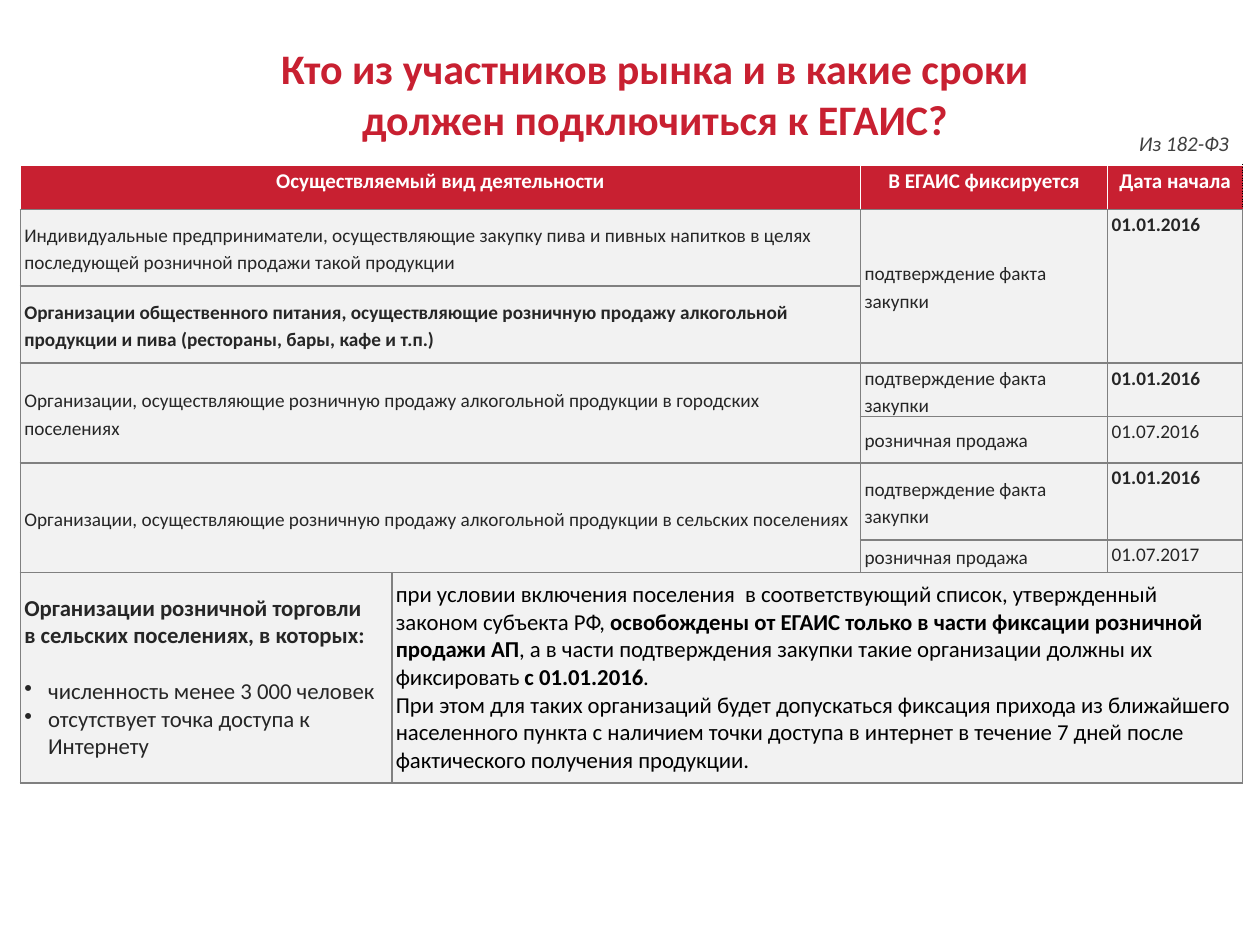
from lxml import etree
from pptx import Presentation
from pptx.dml.color import RGBColor
from pptx.enum.text import MSO_ANCHOR, MSO_AUTO_SIZE, PP_ALIGN
from pptx.oxml.ns import qn
from pptx.util import Cm, Pt

TOP, MIDDLE = MSO_ANCHOR.TOP, MSO_ANCHOR.MIDDLE
LEFT, CENTER = PP_ALIGN.LEFT, PP_ALIGN.CENTER
GROW = MSO_AUTO_SIZE.SHAPE_TO_FIT_TEXT
HUES = {"red": "C82031", "white": "FFFFFF", "pale": "F2F2F2", "grey": "808080",
        "dark": "262626", "soft": "404040", "black": "000000"}
LOOSE = {"line_spacing": 1.15, "space_after": Pt(10)}


def apply(target, values):
    for name, value in values.items():
        setattr(target, name, value)


class Deck:
    """Hold the style and the current slide."""

    def __init__(self, width, height, face):
        self.show = Presentation()
        apply(self.show, {"slide_width": Cm(width), "slide_height": Cm(height)})
        self.slide = self.show.slides.add_slide(self.show.slide_layouts[6])
        self.face = face

    def lay(self, frame, paras, hue, size, form, **font):
        for i, runs in enumerate(paras):
            para = frame.paragraphs[0] if i == 0 else frame.add_paragraph()
            apply(para, form)
            for text, bold in runs:
                run = para.add_run()
                run.text = text
                run.font.color.rgb = RGBColor.from_string(HUES[hue])
                apply(run.font, {"name": self.face, "size": Pt(size), "bold": bold, **font})

    def text(self, box, paras, hue, size, align=LEFT, wrap=True, **font):
        frame = self.slide.shapes.add_textbox(*map(Cm, box)).text_frame
        apply(frame, {"word_wrap": wrap, "auto_size": GROW})
        self.lay(frame, paras, hue, size, {"alignment": align}, **font)

    def table(self, left, top, cols, rows):
        box = map(Cm, (left, top, sum(cols), sum(rows)))
        grid = self.slide.shapes.add_table(len(rows), len(cols), *box).table
        apply(grid, {"first_row": False, "horz_banding": False})
        for col, width in zip(grid.columns, cols):
            col.width = Cm(width)
        for row, height in zip(grid.rows, rows):
            row.height = Cm(height)
        return grid

    def paint(self, cell, fill, edges):
        cell.fill.solid()
        cell.fill.fore_color.rgb = RGBColor.from_string(HUES[fill])
        props = cell._tc.get_or_add_tcPr()
        for i, (side, (hue, width, dash)) in enumerate(zip("LRTB", edges)):
            line = etree.Element(qn(f"a:ln{side}"), w=str(Pt(width)))
            solid = etree.SubElement(line, qn("a:solidFill"))
            etree.SubElement(solid, qn("a:srgbClr"), val=HUES[hue])
            etree.SubElement(line, qn("a:prstDash"), val=dash)
            props.insert(i, line)

    def fill(self, grid, place, span, paras, hue, size, form, anchor=MIDDLE):
        row, col = place
        cell = grid.cell(row, col)
        if span != (1, 1):
            cell.merge(grid.cell(row + span[0] - 1, col + span[1] - 1))
        apply(cell, {"margin_left": Cm(0.08), "margin_right": Cm(0.08), "margin_top": 0,
                     "margin_bottom": 0, "vertical_anchor": anchor})
        self.lay(cell.text_frame, paras, hue, size, form)
        return cell

    def bullet(self, para):
        props = para._p.get_or_add_pPr()
        props.set("marL", str(Cm(0.48)))
        props.set("indent", str(-Cm(0.48)))
        etree.SubElement(props, qn("a:buChar"), char="•")


HEADS = [(0, 2, "Осуществляемый вид деятельности"), (2, 1, "В ЕГАИС фиксируется"),
         (3, 1, "Дата начала")]
FACT, SALE = "подтверждение факта закупки", "розничная продажа"
TRADE = "Организации, осуществляющие розничную продажу алкогольной продукции в "
KINDS = [
    (1, 1, "Индивидуальные предприниматели, осуществляющие закупку пива и пивных напитков "
     "в целях последующей розничной продажи такой продукции", False),
    (2, 1, "Организации общественного питания, осуществляющие розничную продажу алкогольной "
     "продукции и пива (рестораны, бары, кафе и т.п.)", True),
    (3, 2, TRADE + "городских поселениях", False),
    (5, 2, TRADE + "сельских поселениях", False),
]
DATES = [(1, 2, FACT, "01.01.2016", True), (3, 1, FACT, "01.01.2016", True),
         (4, 1, SALE, "01.07.2016", False), (5, 1, FACT, "01.01.2016", True),
         (6, 1, SALE, "01.07.2017", False)]
RURAL = [
    [("Организации розничной торговли", True)],
    [("в сельских поселениях, в которых:", True)],
    [("численность менее 3 000 человек", False)],
    [("отсутствует точка доступа к Интернету", False)],
]
TERMS = [
    [("при условии включения поселения  в соответствующий список, утвержденный законом "
      "субъекта РФ, ", False),
     ("освобождены от ЕГАИС только в части фиксации розничной продажи АП", True),
     (", а в части подтверждения закупки такие организации должны их фиксировать ", False),
     ("с 01.01.2016", True), (".", False)],
    [("При этом для таких организаций будет допускаться фиксация прихода из ближайшего "
      "населенного пункта с наличием точки доступа в интернет в течение 7 дней после "
      "фактического получения продукции.", False)],
]


def main():
    deck = Deck(25.4, 19.05, "Calibri")
    title = ["Кто из участников рынка и в какие сроки", "должен подключиться к ЕГАИС?"]
    deck.text((4.9, 0.74, 16.61, 2.31), [[(line, True)] for line in title], "red", 24, CENTER)

    grid = deck.table(0.41, 3.33, (7.49, 9.45, 4.98, 2.72),
                      (0.89, 1.55, 1.55, 1.04, 0.94, 1.55, 0.66, 4.24))
    grey, white = ("grey", 1, "solid"), ("white", 1, "solid")
    dots = ("black", 0.25, "sysDot")
    for row in range(8):
        for col in range(4):
            head = (white, dots if col == 3 else white, white, grey)
            deck.paint(grid.cell(row, col), "pale" if row else "red",
                       [grey] * 4 if row else head)

    for col, wide, text in HEADS:
        deck.fill(grid, (0, col), (1, wide), [[(text, True)]], "white", 12,
                  {"alignment": CENTER, **LOOSE}, TOP)
    for row, tall, text, bold in KINDS:
        deck.fill(grid, (row, 0), (tall, 2), [[(text, bold)]], "dark", 11, LOOSE)
    for row, tall, text, date, bold in DATES:
        deck.fill(grid, (row, 2), (tall, 1), [[(text, False)]], "dark", 11, LOOSE)
        deck.fill(grid, (row, 3), (tall, 1), [[(date, bold)]], "dark", 11, LOOSE, TOP)

    rural = deck.fill(grid, (7, 0), (1, 1), RURAL, "dark", 13, {})
    items = rural.text_frame.paragraphs[2:]
    items[0].space_before = Pt(15.9)
    for item in items:
        deck.bullet(item)
    deck.fill(grid, (7, 1), (1, 3), TERMS, "black", 13, {})

    deck.text((22.71, 2.51, 2.34, 0.76), [[("Из 182-ФЗ", False)]], "soft", 12,
              wrap=False, italic=True)
    deck.show.save("out.pptx")


if __name__ == "__main__":
    main()
